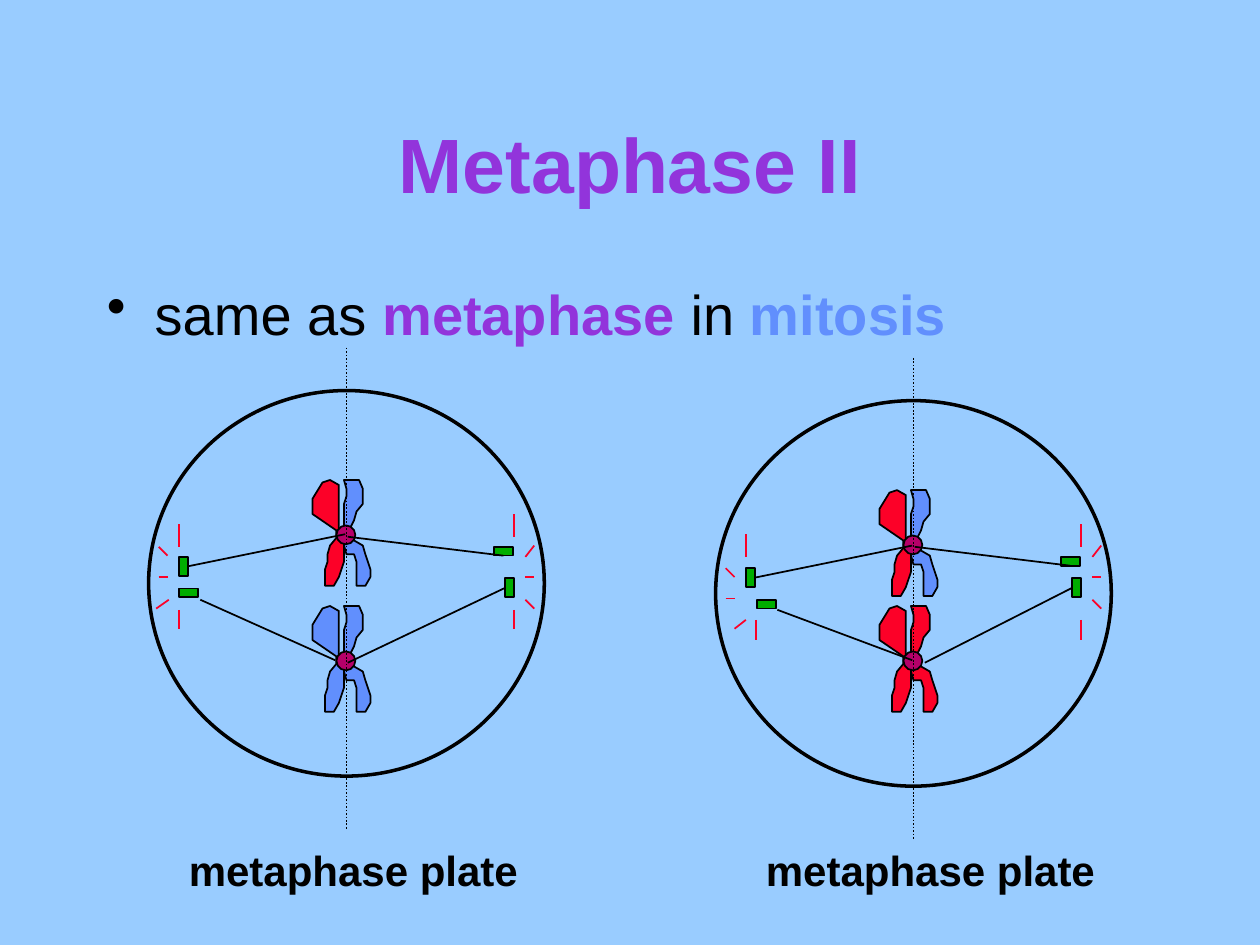
from dataclasses import dataclass
from typing import NamedTuple, Optional

import pptx
import pptx.dml.color
import pptx.enum.dml
import pptx.enum.shapes
import pptx.enum.text
import pptx.oxml
import pptx.oxml.ns
import pptx.util

Inches = pptx.util.Inches
Pt = pptx.util.Pt
RGBColor = pptx.dml.color.RGBColor
Shape = pptx.enum.shapes.MSO_SHAPE
Align = pptx.enum.text.PP_ALIGN

SKY = RGBColor(0x99, 0xCC, 0xFF)
PURPLE = RGBColor(0x92, 0x34, 0xDB)
BLUE = RGBColor(0x61, 0x8F, 0xFD)
RED = RGBColor(0xFC, 0x01, 0x28)
MAGENTA = RGBColor(0xB5, 0x00, 0x69)
GREEN = RGBColor(0x00, 0xAE, 0x00)
BLACK = RGBColor(0, 0, 0)

RIGHT_SIDE, LEFT_SIDE, BOTTOM = 3, 1, 2

# Chromatid outlines, measured from the centromere
LEFT_CHROMATID = [
    (0, 0), (-0.06, -0.02), (-0.06, -0.4), (-0.13, -0.44), (-0.19, -0.42),
    (-0.27, -0.29), (-0.27, -0.17), (-0.08, -0.04), (-0.08, 0.02), (-0.13, 0.08),
    (-0.15, 0.15), (-0.15, 0.21), (-0.17, 0.27), (-0.17, 0.4), (-0.1, 0.4),
    (-0.06, 0.33), (-0.02, 0.21), (-0.02, 0.02),
]
RIGHT_CHROMATID = [
    (0, 0), (-0.02, -0.06), (-0.02, -0.25), (0, -0.31), (0, -0.37), (-0.02, -0.44),
    (0.1, -0.44), (0.13, -0.37), (0.13, -0.25), (0.08, -0.19), (0.06, -0.12),
    (0, 0), (0.06, 0.04), (0.13, 0.08), (0.15, 0.15), (0.19, 0.27), (0.19, 0.33),
    (0.15, 0.4), (0.08, 0.4), (0.08, 0.21), (0.06, 0.15), (0, 0.15), (-0.02, 0.08),
    (-0.02, 0.02),
]


class Words(NamedTuple):
    text: str
    color: RGBColor = BLACK
    bold: bool = False


class Chromosome(NamedTuple):
    y: float
    left_color: RGBColor
    right_color: RGBColor


class Centriole(NamedTuple):
    """x is measured from the plate; the fiber runs from start to end."""
    x: float
    y: float
    upright: bool
    fiber_start: tuple[float, float]
    fiber_end: tuple[float, float]
    joined_side: Optional[int] = None


@dataclass
class Cell:
    """x values are measured from the metaphase plate."""
    plate_x: float
    top: float
    label_x: float
    chromosomes: list[Chromosome]
    centrioles: list[Centriole]
    rays: list[tuple[float, float, float, float]]


CELLS = [
    Cell(
        2.75, 3.1, 1.4,
        [Chromosome(5.25, BLUE, BLUE), Chromosome(4.25, RED, BLUE)],
        [
            Centriole(-1.33, 4.42, True, (-1.24, 4.51), (-0.01, 4.24), RIGHT_SIDE),
            Centriole(-1.33, 4.67, False, (-1.16, 4.76), (-0.09, 5.24)),
            Centriole(1.17, 4.34, False, (1.24, 4.41), (0.01, 4.26), BOTTOM),
            Centriole(1.26, 4.59, True, (1.24, 4.66), (0.01, 5.26), LEFT_SIDE),
        ],
        [
            (1.33, 4.26, 1.33, 4.08), (1.42, 4.42, 1.49, 4.33), (1.42, 4.58, 1.49, 4.58),
            (1.42, 4.76, 1.49, 4.83), (1.33, 4.84, 1.33, 4.99),
            (-1.33, 4.34, -1.33, 4.16), (-1.49, 4.34, -1.42, 4.41),
            (-1.49, 4.58, -1.42, 4.58), (-1.41, 4.76, -1.51, 4.83),
            (-1.33, 4.84, -1.33, 4.99),
        ],
    ),
    Cell(
        7.25, 3.18, 5.98,
        [Chromosome(4.33, RED, BLUE), Chromosome(5.25, RED, RED)],
        [
            Centriole(-1.33, 4.51, True, (-1.24, 4.59), (-0.01, 4.33), RIGHT_SIDE),
            Centriole(-1.24, 4.76, False, (-1.08, 4.84), (-0.01, 5.24)),
            Centriole(1.17, 4.42, False, (1.24, 4.49), (0.01, 4.34), BOTTOM),
            Centriole(1.26, 4.59, True, (1.24, 4.66), (0.09, 5.26), LEFT_SIDE),
        ],
        [
            (1.33, 4.34, 1.33, 4.16), (1.42, 4.42, 1.49, 4.33), (1.42, 4.58, 1.49, 4.58),
            (1.42, 4.76, 1.49, 4.83), (1.33, 4.92, 1.33, 5.08),
            (-1.33, 4.42, -1.33, 4.24), (-1.49, 4.51, -1.42, 4.58),
            (-1.49, 4.75, -1.42, 4.75), (-1.33, 4.92, -1.42, 4.99),
            (-1.25, 4.92, -1.25, 5.08),
        ],
    ),
]


def write(frame, *runs: Words, size: float, align=Align.LEFT,
          wrap: bool = True, bullet: bool = False) -> None:
    frame.word_wrap = wrap
    paragraph = frame.paragraphs[0]
    paragraph.alignment = align
    for words in runs:
        run = paragraph.add_run()
        run.text = words.text
        run.font.name = "Arial"
        run.font.size = Pt(size)
        run.font.bold = words.bold
        run.font.color.rgb = words.color
    if bullet:
        properties = paragraph._p.get_or_add_pPr()
        properties.set("marL", str(Inches(0.38)))
        properties.set("indent", str(-Inches(0.38)))
        space = pptx.oxml.ns.qn("a:spcBef")
        percent = properties.makeelement(pptx.oxml.ns.qn("a:spcPct"), {"val": "20000"})
        before = properties.makeelement(space, {})
        before.append(percent)
        mark = properties.makeelement(pptx.oxml.ns.qn("a:buChar"), {"char": "•"})
        properties.extend([before, mark])


def style(shape, fill: Optional[RGBColor], width: float = 1):
    shape.shadow.inherit = False
    if fill is None:
        shape.fill.background()
    else:
        shape.fill.solid()
        shape.fill.fore_color.rgb = fill
    shape.line.color.rgb = BLACK
    shape.line.width = Pt(width)
    return shape


def add_preset(shapes, kind, x: float, y: float, width: float, height: float,
               fill: Optional[RGBColor], line_width: float = 1):
    box = (Inches(value) for value in (x, y, width, height))
    return style(shapes.add_shape(kind, *box), fill, line_width)


def add_line(shapes, x1: float, y1: float, x2: float, y2: float,
             color: RGBColor = BLACK, dash=None):
    ends = (Inches(value) for value in (x1, y1, x2, y2))
    line = shapes.add_connector(pptx.enum.shapes.MSO_CONNECTOR.STRAIGHT, *ends)
    line.line.color.rgb = color
    line.line.width = Pt(1)
    if dash is not None:
        line.line.dash_style = dash
    properties = line._element.spPr
    properties.append(properties.makeelement(pptx.oxml.ns.qn("a:effectLst"), {}))
    return line


def add_chromosome(shapes, x: float, chromosome: Chromosome) -> None:
    y = chromosome.y
    for outline, color in ((LEFT_CHROMATID, chromosome.left_color),
                           (RIGHT_CHROMATID, chromosome.right_color)):
        points = [(Inches(x + dx), Inches(y + dy)) for dx, dy in outline]
        builder = shapes.build_freeform(*points[0])
        builder.add_line_segments(points[1:], close=True)
        style(builder.convert_to_shape(), color)
    add_preset(shapes, Shape.OVAL, x - 0.08, y - 0.08, 0.15, 0.15, MAGENTA)


def add_cell(shapes, cell: Cell) -> None:
    x = cell.plate_x
    for chromosome in cell.chromosomes:
        add_chromosome(shapes, x, chromosome)
    add_preset(shapes, Shape.OVAL, x - 1.57, cell.top, 3.14, 3.06, None, 2)
    for x1, y1, x2, y2 in cell.rays:
        add_line(shapes, x + x1, y1, x + x2, y2, RED)
    add_line(shapes, x, cell.top - 0.34, x, cell.top + 3.48,
             dash=pptx.enum.dml.MSO_LINE.ROUND_DOT)
    for centriole in cell.centrioles:
        size = (0.07, 0.15) if centriole.upright else (0.15, 0.07)
        body = add_preset(shapes, Shape.RECTANGLE, x + centriole.x, centriole.y, *size, GREEN)
        (x1, y1), (x2, y2) = centriole.fiber_start, centriole.fiber_end
        fiber = add_line(shapes, x + x1, y1, x + x2, y2)
        if centriole.joined_side is not None:
            fiber.begin_connect(body, centriole.joined_side)
    label = shapes.add_textbox(Inches(cell.label_x), Inches(6.65), Inches(2.81), Inches(0.5))
    write(label.text_frame, Words("metaphase plate", bold=True), size=24, wrap=False)
    label.text_frame.auto_size = pptx.enum.text.MSO_AUTO_SIZE.SHAPE_TO_FIT_TEXT


def main() -> None:
    deck = pptx.Presentation()
    deck.slide_width, deck.slide_height = Inches(10), Inches(7.5)
    slide = deck.slides.add_slide(deck.slide_layouts[5])
    slide.background.fill.solid()
    slide.background.fill.fore_color.rgb = SKY

    title = slide.shapes.title
    title.left, title.top = Inches(0.75), Inches(0.67)
    title.width, title.height = Inches(8.5), Inches(1.25)
    title.text_frame.vertical_anchor = pptx.enum.text.MSO_ANCHOR.MIDDLE
    write(title.text_frame, Words("Metaphase II", PURPLE, True), size=44, align=Align.CENTER)

    summary = slide.shapes.add_textbox(Inches(0.75), Inches(2.17), Inches(8.5), Inches(4.5))
    write(summary.text_frame, Words("same as "), Words("metaphase", PURPLE, True),
          Words(" in "), Words("mitosis", BLUE, True), size=32, bullet=True)

    for cell in CELLS:
        add_cell(slide.shapes, cell)
    deck.save("out.pptx")


if __name__ == "__main__":
    main()
